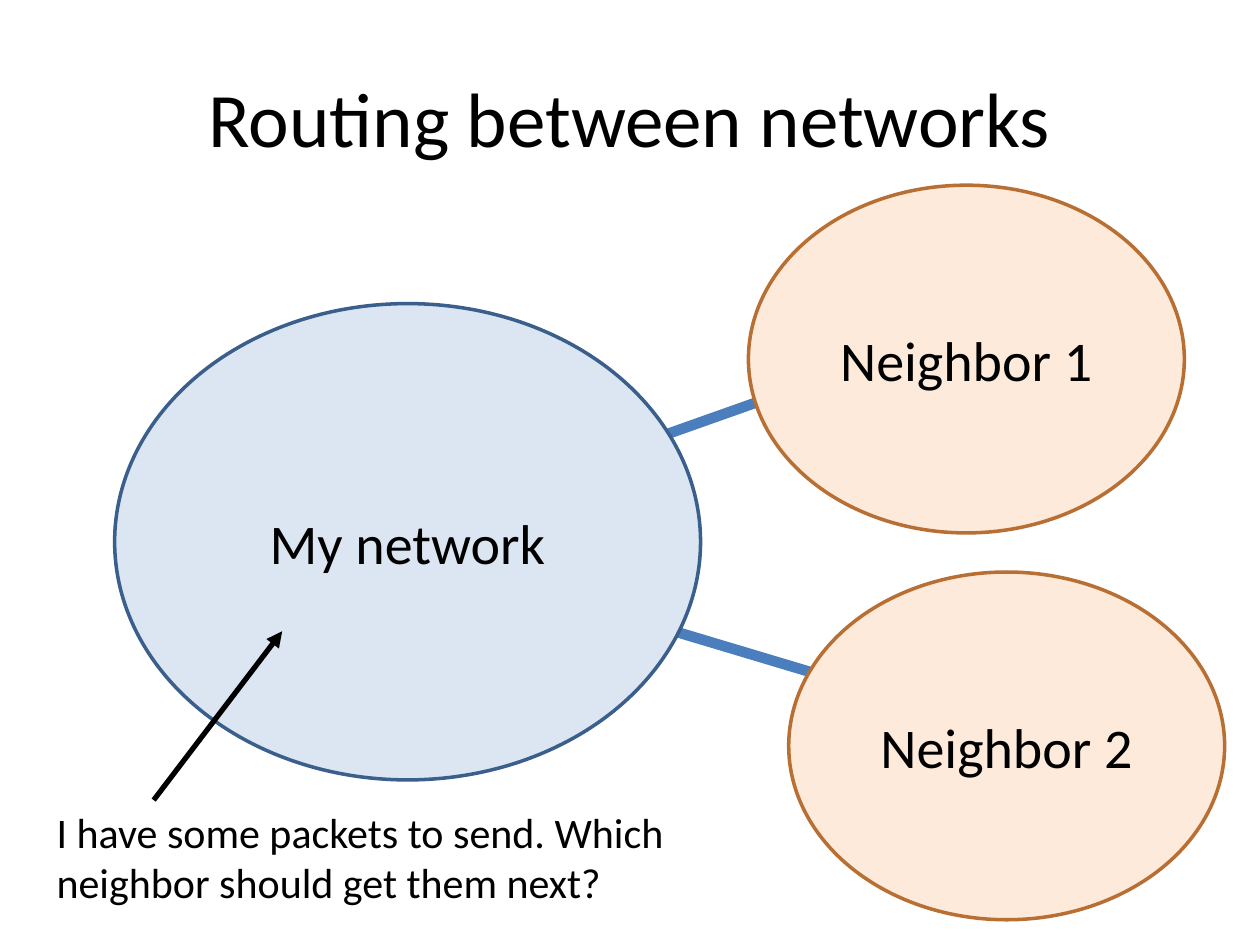
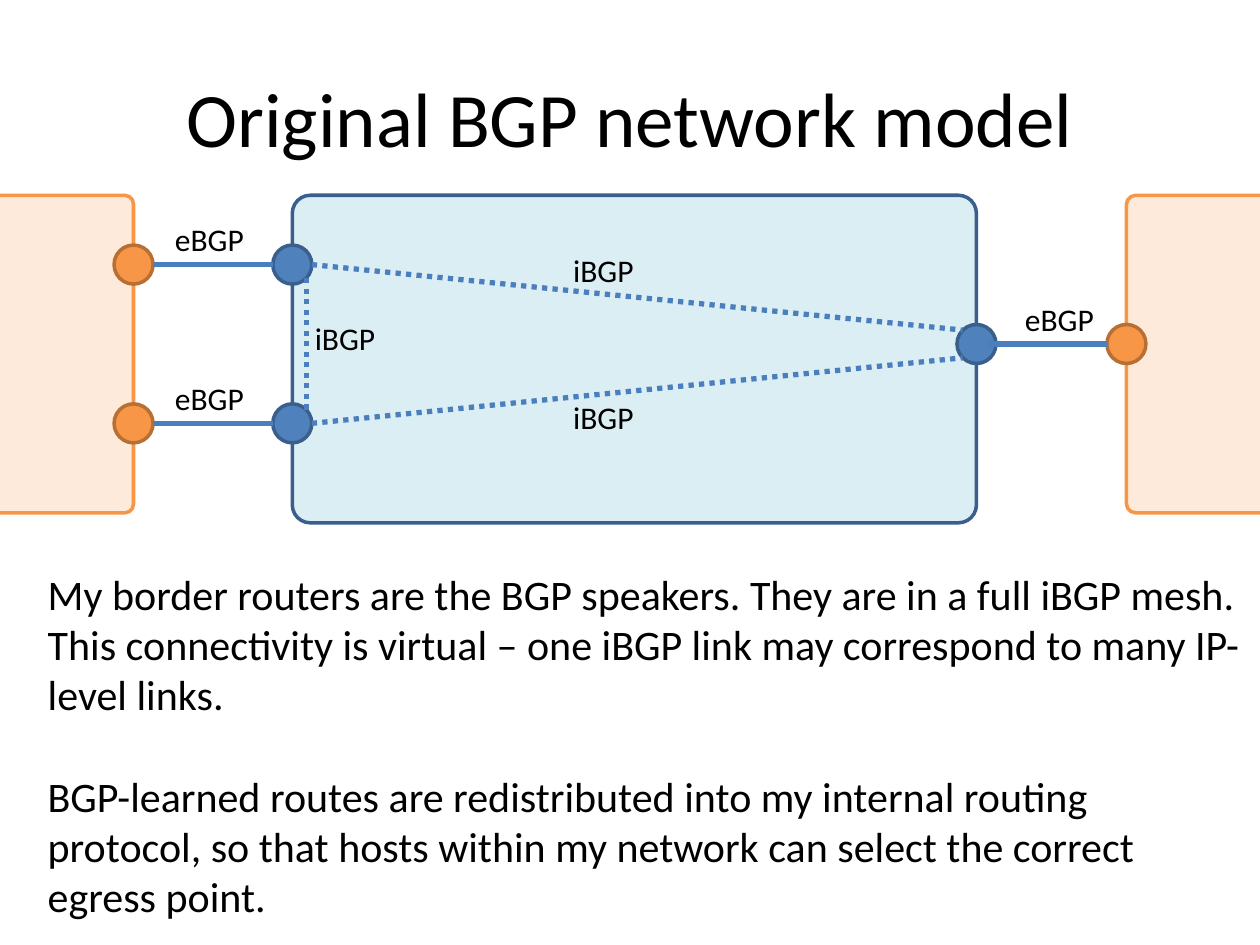
import pptx
import pptx.util
import pptx.dml.color
import pptx.enum.dml
import pptx.enum.shapes
import pptx.enum.text
import lxml.etree
from dataclasses import dataclass
from pptx.util import Inches, Pt

SHAPE = pptx.enum.shapes.MSO_SHAPE
ALIGN = pptx.enum.text.PP_ALIGN
ANCHOR = pptx.enum.text.MSO_ANCHOR
SYS_DOT = pptx.enum.dml.MSO_LINE.ROUND_DOT
A = "{http://schemas.openxmlformats.org/drawingml/2006/main}"


@dataclass(frozen=True)
class Theme:
    font: str = "Calibri"
    text: str = "000000"
    link: str = "4B7EBC"
    mine: str = "DCE6F2"
    mine_box: str = "DBEEF4"
    mine_router: str = "4F81BD"
    mine_line: str = "3A5F8C"
    peer: str = "FDEADA"
    peer_router: str = "F79646"
    peer_line: str = "B76F34"
    title_size: int = 44
    network_size: int = 32
    note_size: int = 24
    label_size: int = 18
    outline: int = 2


T = Theme()


def rgb(value):
    return pptx.dml.color.RGBColor.from_string(value)


def write(tf, *paragraphs, size, align=ALIGN.LEFT, anchor=ANCHOR.TOP, wrap=True, gaps=()):
    """Fill a text frame; gaps holds the space before each paragraph in points."""
    tf.word_wrap = wrap
    tf.vertical_anchor = anchor
    for i, text in enumerate(paragraphs):
        p = tf.paragraphs[0] if i == 0 else tf.add_paragraph()
        p.alignment = align
        if i < len(gaps):
            p.space_before = Pt(gaps[i])
        r = p.add_run()
        r.text = text
        r.font.name = T.font
        r.font.size = Pt(size)
        r.font.color.rgb = rgb(T.text)


def add_text(s, x, y, w, h, *paragraphs, **fmt):
    tb = s.shapes.add_textbox(Inches(x), Inches(y), Inches(w), Inches(h))
    write(tb.text_frame, *paragraphs, **fmt)


def add_shape(s, kind, x, y, w, h, fill, line):
    sp = s.shapes.add_shape(kind, Inches(x), Inches(y), Inches(w), Inches(h))
    sp.shadow.inherit = False
    sp.fill.solid()
    sp.fill.fore_color.rgb = rgb(fill)
    sp.line.color.rgb = rgb(line)
    sp.line.width = Pt(T.outline)
    return sp


def add_line(s, x1, y1, x2, y2, color=T.link, width=3, dash=None, arrow=False):
    cn = s.shapes.add_connector(pptx.enum.shapes.MSO_CONNECTOR.STRAIGHT,
                                Inches(x1), Inches(y1), Inches(x2), Inches(y2))
    cn.line.color.rgb = rgb(color)
    cn.line.width = Pt(width)
    if dash:
        cn.line.dash_style = dash
    if arrow:
        lxml.etree.SubElement(cn.line._get_or_add_ln(), A + "tailEnd", type="triangle")
    lxml.etree.SubElement(cn._element.spPr, A + "effectLst")


def add_slide(prs, title):
    s = prs.slides.add_slide(prs.slide_layouts.get_by_name("Title Only"))
    sp = s.shapes.title
    sp.left, sp.top, sp.width, sp.height = map(Inches, (0.5, 0.3, 9, 1.25))
    write(sp.text_frame, title, size=T.title_size, align=ALIGN.CENTER, anchor=ANCHOR.MIDDLE)
    return s


def network_cloud(s, x, y, w, h, name, fill, line):
    sp = add_shape(s, SHAPE.OVAL, x, y, w, h, fill, line)
    write(sp.text_frame, name, size=T.network_size, align=ALIGN.CENTER, anchor=ANCHOR.MIDDLE)


def neighbor_map(s, x, y):
    # Links run behind the clouds
    add_line(s, x + 2.2, y + 2.75, x + 7.08, y + 1.02, width=6)
    add_line(s, x + 2.37, y + 2.92, x + 7.08, y + 4.33, width=6)
    network_cloud(s, x, y + 0.94, 4.65, 3.78, "My network", T.mine, T.mine_line)
    for name, dx, dy in (("Neighbor 1", 5.03, 0), ("Neighbor 2", 5.35, 3.07)):
        network_cloud(s, x + dx, y + dy, 3.46, 2.76, name, T.peer, T.peer_line)


def packet_question(s, x, y):
    add_line(s, x + 0.87, y, x + 1.89, y - 1.34, color=T.text, arrow=True)
    add_text(s, x, y, 5.59, 0.91,
             "I have some packets to send. Which neighbor should get them next?",
             size=T.note_size)


def bgp_diagram(s, x, y):
    """Three networks side by side; routers sit on the network edges."""
    left_peer, my_left, my_right, right_peer = (x + d for d in (1.06, 2.32, 7.75, 8.94))
    upper, middle, lower = (y + 0.55 + 0.63 * i for i in range(3))
    router = 0.31
    rad = router / 2

    # Networks
    for left, w, h, fill, line in (
            (my_left, my_right - my_left, 2.6, T.mine_box, T.mine_line),
            (x - 0.2, 1.26, 2.52, T.peer, T.peer_router),
            (right_peer, 1.34, 2.52, T.peer, T.peer_router)):
        sp = add_shape(s, SHAPE.ROUNDED_RECTANGLE, left, y, w, h, fill, line)
        sp.adjustments[0] = 0.055

    # Routers
    mine = (my_left, upper), (my_left, lower), (my_right, middle)
    peers = (left_peer, upper), (left_peer, lower), (right_peer, middle)
    for centers, fill, line in ((mine, T.mine_router, T.mine_line),
                                (peers, T.peer_router, T.peer_line)):
        for cx, cy in centers:
            add_shape(s, SHAPE.OVAL, cx - rad, cy - rad, router, router, fill, line)

    # External sessions, each label centred above its link
    for x1, x2, cy in ((left_peer + rad, my_left - rad, upper),
                       (left_peer + rad, my_left - rad, lower),
                       (my_right + rad / 2, right_peer - rad, middle)):
        add_line(s, x1, cy, x2, cy)
        label_x = (x1 + x2) / 2 - 0.4 + (0.13 if cy == middle else 0)
        add_text(s, label_x, cy - 0.4, 0.75, 0.4, "eBGP", size=T.label_size, wrap=False)

    # Internal full mesh
    near, far = my_left + rad, my_right - 0.11
    for x1, y1, x2, y2 in ((near, upper, far, middle - 0.11),
                           (near, lower, far, middle + 0.11),
                           (my_left + 0.11, lower - 0.11, my_left + 0.11, upper + 0.11)):
        add_line(s, x1, y1, x2, y2, dash=SYS_DOT)
    for dx, dy in ((4.45, 0.39), (4.45, 1.56), (2.4, 0.93)):
        add_text(s, x + dx, y + dy, 0.69, 0.4, "iBGP", size=T.label_size, wrap=False)


def bgp_notes(s, x, y):
    add_text(s, x, y, 9.71, 2.93,
             "My border routers are the BGP speakers. They are in a full iBGP mesh.",
             "This connectivity is virtual – one iBGP link may correspond to many IP-level links.",
             "BGP-learned routes are redistributed into my internal routing protocol, "
             "so that hosts within my network can select the correct egress point.",
             size=T.note_size, gaps=(0, 0, 29))


def main():
    prs = pptx.Presentation()
    prs.slide_width, prs.slide_height = Inches(10), Inches(7.5)

    s = add_slide(prs, "Routing between networks")
    neighbor_map(s, 0.91, 1.47)
    packet_question(s, 0.35, 6.35)

    s = add_slide(prs, "Original BGP network model")
    bgp_diagram(s, 0, 1.55)
    bgp_notes(s, 0.28, 4.46)

    prs.save("out.pptx")


if __name__ == "__main__":
    main()
